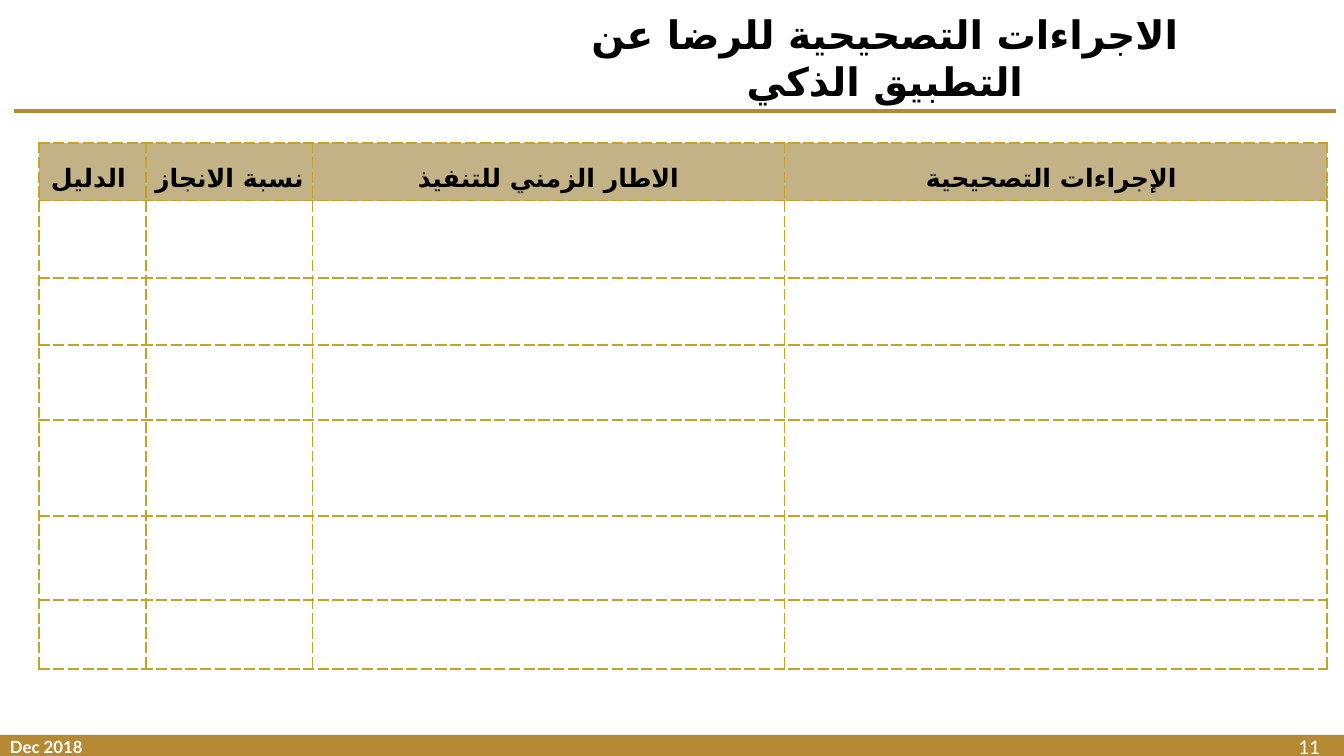
from pptx import Presentation
from pptx.dml.color import RGBColor
from pptx.enum import shapes, text
from pptx.oxml import parse_xml, ns
from pptx.util import Inches, Pt

TITLE = "الاجراءات التصحيحية للرضا عن التطبيق الذكي"
HEADS = ["الدليل ", "نسبة الانجاز", "الاطار الزمني للتنفيذ", "الإجراءات التصحيحية "]
COLS = [1.06, 1.65, 4.68, 5.38]
ROWS = [0.57, 0.77, 0.66, 0.75, 0.95, 0.83, 0.69]
NOTES = [
    ("Dec 2018", (0, 7.26, 2.11, 0.4), dict(size=12, bold=True)),
    ("11", (12.78, 7.23, 0.78, 0.4), dict(size=15, face="Calibri")),
]
ARABIC = "DejaVu Sans"
GOLD = RGBColor(0xB6, 0x8A, 0x35)
SAND = RGBColor(0xC4, 0xB2, 0x87)
EDGE = RGBColor(0xC6, 0xA3, 0x26)
BLACK = RGBColor(0, 0, 0)
WHITE = RGBColor(255, 255, 255)
CENTER = text.PP_ALIGN.CENTER
MIDDLE = text.MSO_ANCHOR.MIDDLE


def write(frame, words, size=18, face="Lato", color=BLACK, bold=False, align=None, rtl=False):
    """Put one formatted paragraph into a text frame and return it."""
    para = frame.paragraphs[0]
    para.alignment = align
    if rtl:
        para._p.get_or_add_pPr().set("rtl", "1")
    run = para.add_run()
    run.text = words
    font = run.font
    font.size, font.bold, font.name = Pt(size), bold, face
    font.color.rgb = color
    font._element.append(parse_xml(f'<a:cs {ns.nsdecls("a")} typeface="{ARABIC}"/>'))
    return para


def border(cell):
    """Draw the dashed edge on all four sides of a cell."""
    props = cell._tc.get_or_add_tcPr()
    for spot, side in enumerate(("lnL", "lnR", "lnT", "lnB")):
        props.insert(spot, parse_xml(
            f'<a:{side} {ns.nsdecls("a")} w="{Pt(1.5)}"><a:solidFill><a:srgbClr val="{EDGE}"/>'
            f'</a:solidFill><a:prstDash val="sysDash"/></a:{side}>'))


def frame_page(slide):
    """Add the footer band, the rule under the title and the footer texts."""
    band = slide.shapes.add_shape(shapes.MSO_SHAPE.RECTANGLE, 0, Inches(7.29), Inches(13.33), Inches(0.21))
    band.shadow.inherit = False
    band.fill.solid()
    band.fill.fore_color.rgb = GOLD
    band.line.fill.background()
    rule = slide.shapes.add_connector(
        shapes.MSO_CONNECTOR.STRAIGHT, Inches(0.14), Inches(1.1), Inches(13.25), Inches(1.1))
    rule.line.color.rgb = GOLD
    rule.line.width = Pt(3)
    rule._element.spPr.append(parse_xml(f'<a:effectLst {ns.nsdecls("a")}/>'))
    for words, place, style in NOTES:
        box = slide.shapes.add_textbox(*map(Inches, place)).text_frame
        box.word_wrap = True
        write(box, words, color=WHITE, **style)


def add_title(slide):
    """Place and fill the title."""
    title = slide.shapes.title
    title.left, title.top, title.width, title.height = map(Inches, (5.26, 0.17, 7.03, 0.8))
    frame = title.text_frame
    frame.auto_size = text.MSO_AUTO_SIZE.NONE
    frame.word_wrap = True
    frame.vertical_anchor = MIDDLE
    write(frame, TITLE, size=28, bold=True, align=CENTER, rtl=True)


def add_grid(slide):
    """Add the table with a header row and empty rows to fill in."""
    table = slide.shapes.add_table(
        len(ROWS), len(COLS), Inches(0.39), Inches(1.42), Inches(sum(COLS)), Inches(sum(ROWS))).table
    table.horz_banding = False
    for col, width in zip(table.columns, COLS):
        col.width = Inches(width)
    for row, height in zip(table.rows, ROWS):
        row.height = Inches(height)
    for cell in table.iter_cells():
        cell.fill.background()
        border(cell)
    for cell, head in zip(table.rows[0].cells, HEADS):
        cell.fill.solid()
        cell.fill.fore_color.rgb = SAND
        cell.vertical_anchor = MIDDLE
        cell.margin_left = cell.margin_right = Inches(0.06)
        cell.margin_top = cell.margin_bottom = Inches(0.03)
        para = write(cell.text_frame, head, bold=True, align=CENTER)
        para.line_spacing = 1.5
        para.space_after = Pt(6)


def main():
    """Build and save the slide."""
    deck = Presentation()
    deck.slide_width, deck.slide_height = Inches(13.33), Inches(7.5)
    slide = deck.slides.add_slide(deck.slide_layouts[5])
    frame_page(slide)
    add_title(slide)
    add_grid(slide)
    deck.save("out.pptx")


if __name__ == "__main__":
    main()
